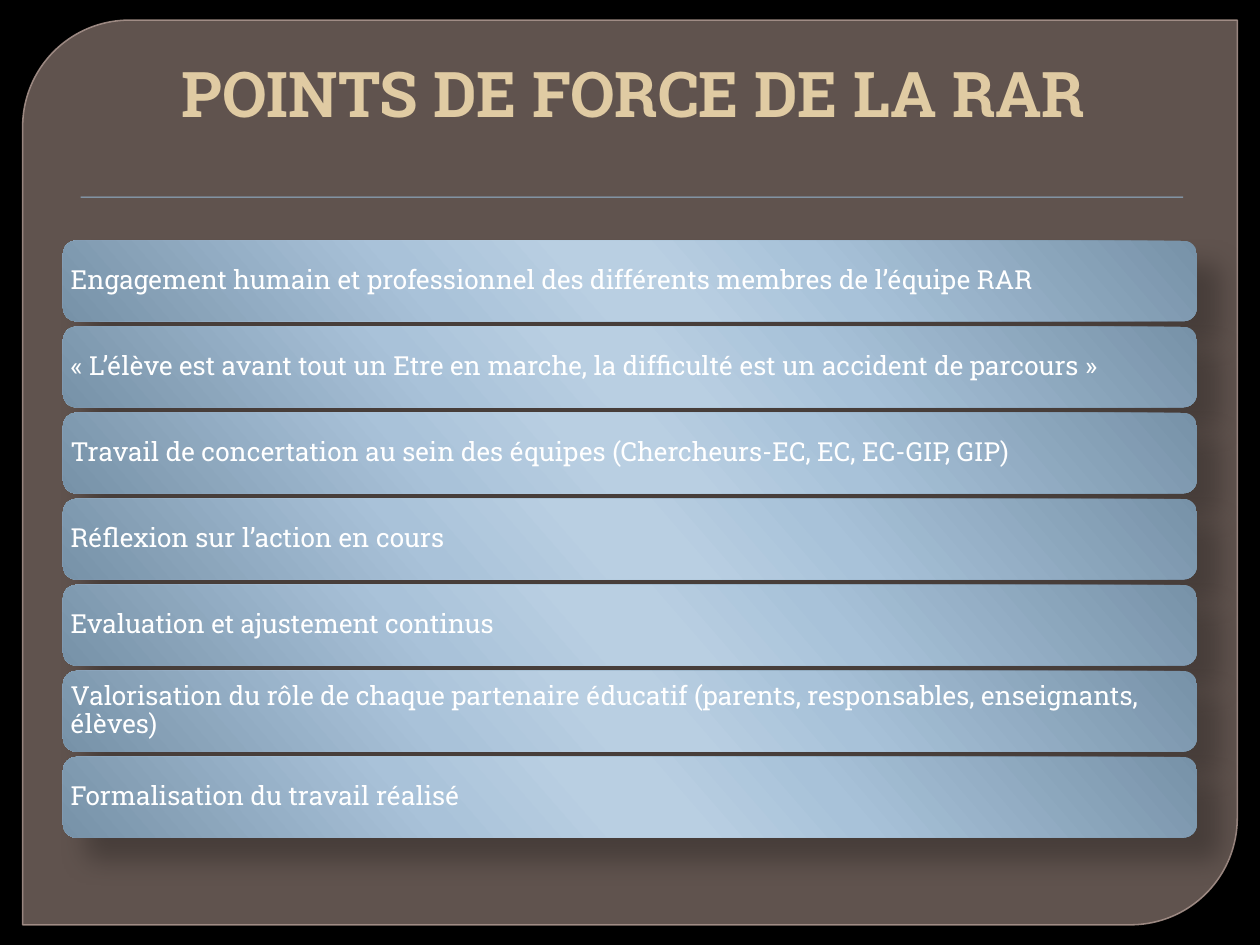
from dataclasses import dataclass

from lxml import etree
from pptx import Presentation
from pptx.dml.color import RGBColor
from pptx.enum.shapes import MSO_SHAPE
from pptx.enum.text import MSO_ANCHOR, PP_ALIGN
from pptx.oxml.ns import qn
from pptx.util import Inches, Pt

PANEL_SHAPE = MSO_SHAPE.ROUND_2_DIAG_RECTANGLE
RULE_SHAPE = MSO_SHAPE.RECTANGLE
BAR_SHAPE = MSO_SHAPE.ROUNDED_RECTANGLE
MIDDLE, BOTTOM = MSO_ANCHOR.MIDDLE, MSO_ANCHOR.BOTTOM
LEFT, CENTER = PP_ALIGN.LEFT, PP_ALIGN.CENTER

SLIDE_WIDTH, SLIDE_HEIGHT = 10, 7.5
COLUMN_LEFT, COLUMN_WIDTH = 0.5, 9
FIRST_BAR_TOP, BAR_PITCH, BAR_HEIGHT = 1.91, 0.683, 0.64

TITLE = "POINTS DE FORCE DE LA RAR"
STRENGTHS = [
    "Engagement humain et professionnel des différents membres de l’équipe RAR",
    "« L’élève est avant tout un Etre en marche, la difficulté est un accident de parcours »",
    "Travail de concertation au sein des équipes (Chercheurs-EC, EC, EC-GIP, GIP)",
    "Réflexion sur l’action en cours",
    "Evaluation et ajustement continus",
    "Valorisation du rôle de chaque partenaire éducatif (parents, responsables, enseignants, élèves)",
    "Formalisation du travail réalisé",
]


@dataclass(frozen=True)
class Theme:
    font: str = "Roboto Slab"
    title_size: float = 36
    bar_size: float = 15
    background: str = "000000"
    panel: str = "948079"
    panel_line: str = "A9948D"
    rule: str = "94B6D2"
    title: str = "E0CBA3"
    bar_text: str = "FFFFFF"
    shadow: str = "000000"
    bar_angle: int = 139
    bar_stops: tuple = (
        (0, "7792A8"), (33, "A8C2D9"), (47, "B9CFE2"),
        (53, "B9CFE2"), (68, "A9C2D9"), (100, "7792A8"),
    )


THEME = Theme()


def set_values(target, values):
    for name, value in values.items():
        setattr(target, name, value)


def add_color(parent, color, alpha=100):
    element = etree.SubElement(parent, qn("a:srgbClr"), val=color)
    etree.SubElement(element, qn("a:alpha"), val=str(alpha * 1000))


def set_solid(fill, color, alpha=100):
    fill.solid()
    fill.fore_color.rgb = RGBColor.from_string(color)
    if alpha < 100:
        element = fill._xPr.find(qn("a:solidFill")).find(qn("a:srgbClr"))
        etree.SubElement(element, qn("a:alpha"), val=str(alpha * 1000))


def set_gradient(shape, stops, angle):
    shape.fill.gradient()
    shape.fill.gradient_angle = 360 - angle  # python-pptx counts anticlockwise
    stop_list = shape._element.spPr.find(qn("a:gradFill")).find(qn("a:gsLst"))
    for stop in list(stop_list):
        stop_list.remove(stop)
    for position, color in stops:
        stop = etree.SubElement(stop_list, qn("a:gs"), pos=str(position * 1000))
        add_color(stop, color)


def set_shadow(shape, alpha, blur, distance, direction):
    effects = shape._element.spPr.find(qn("a:effectLst"))
    shadow = etree.SubElement(
        effects, qn("a:outerShdw"), blurRad=str(Pt(blur)), dist=str(Pt(distance)),
        dir=str(direction * 60000), algn="tl", rotWithShape="0")
    add_color(shadow, THEME.shadow, alpha)


def add_plain_shape(slide, kind, left, top, width, height):
    shape = slide.shapes.add_shape(
        kind, Inches(left), Inches(top), Inches(width), Inches(height))
    shape.line.fill.background()
    shape.shadow.inherit = False
    return shape


def write_text(shape, text, font, paragraph_format, frame_format):
    frame = shape.text_frame
    set_values(frame, {"word_wrap": True, **frame_format})
    paragraph = frame.paragraphs[0]
    set_values(paragraph, paragraph_format)
    run = paragraph.add_run()
    run.text = text
    color = font.pop("color")
    set_values(run.font, {"name": THEME.font, **font})
    run.font.color.rgb = RGBColor.from_string(color)


def add_panel(slide):
    panel = add_plain_shape(slide, PANEL_SHAPE, 0.18, 0.16, 9.64, 7.18)
    panel.adjustments[0] = 0.118
    panel.adjustments[1] = 0
    set_solid(panel.fill, THEME.panel, 65)
    set_solid(panel.line.fill, THEME.panel_line, 88)
    panel.line.width = Pt(0.87)


def add_rule(slide):
    rule = add_plain_shape(slide, RULE_SHAPE, 0.64, 1.56, 8.75, 0.01)
    set_solid(rule.fill, THEME.rule)
    set_shadow(rule, alpha=75, blur=1, distance=1, direction=90)


def add_title(slide):
    title = slide.shapes.add_textbox(
        Inches(COLUMN_LEFT), Inches(0.28), Inches(COLUMN_WIDTH), Inches(0.8))
    write_text(
        title, TITLE,
        {"size": Pt(THEME.title_size), "bold": True, "color": THEME.title},
        {"alignment": CENTER}, {"vertical_anchor": BOTTOM})
    paragraph = title.text_frame.paragraphs[0]
    paragraph._p.get_or_add_pPr().set("marL", str(Inches(0.06)))


def add_bar(slide, row, text):
    bar = add_plain_shape(
        slide, BAR_SHAPE, COLUMN_LEFT, FIRST_BAR_TOP + row * BAR_PITCH,
        COLUMN_WIDTH, BAR_HEIGHT)
    set_gradient(bar, THEME.bar_stops, THEME.bar_angle)
    set_shadow(bar, alpha=26, blur=15, distance=18, direction=45)
    # The rounded corners already inset the text by about 0.03 inches
    margins = {f"margin_{side}": Inches(0.03)
               for side in ("left", "top", "right", "bottom")}
    write_text(
        bar, text, {"size": Pt(THEME.bar_size), "color": THEME.bar_text},
        {"alignment": LEFT, "line_spacing": 0.9},
        {"vertical_anchor": MIDDLE, **margins})


def main():
    presentation = Presentation()
    presentation.slide_width = Inches(SLIDE_WIDTH)
    presentation.slide_height = Inches(SLIDE_HEIGHT)
    slide = presentation.slides.add_slide(presentation.slide_layouts[6])

    # Backdrop
    set_solid(slide.background.fill, THEME.background)
    add_panel(slide)
    add_rule(slide)

    # Stack of strengths
    for row, text in enumerate(STRENGTHS):
        add_bar(slide, row, text)

    # Heading
    add_title(slide)
    presentation.save("out.pptx")


if __name__ == "__main__":
    main()
